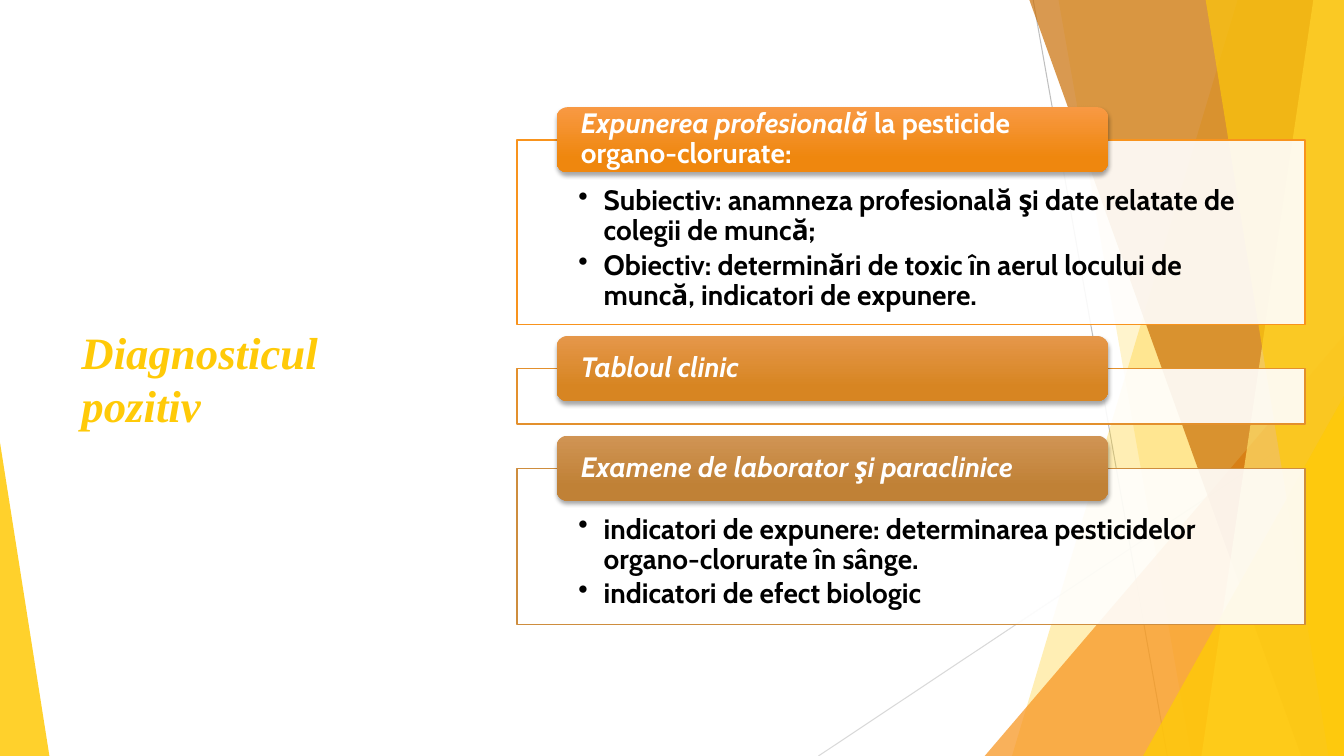
"""Build the slide on the positive diagnosis of organochlorine exposure."""
from lxml import etree
from pptx import Presentation
from pptx.dml.color import RGBColor
from pptx.enum import shapes, text
from pptx.oxml import ns
from pptx.util import Pt

COLORS = {
    "white": "FFFFFF", "black": "000000", "gold": "FFCA08", "pale": "FFDF6B",
    "orange": "F8931D", "brown": "CA6F06", "grey": "BFBFBF", "silver": "D9D9D9",
    "amber": "E3902D", "tan": "CE8D3E",
    "orange_light": "F89943", "orange_dark": "EF870E",
    "amber_light": "E5974A", "amber_dark": "D78522",
    "tan_light": "D09454", "tan_dark": "C08136",
}
WIDTH, HEIGHT = 960, 540
PANEL_LEFT, PANEL_WIDTH, PANEL_GAP = 369.3, 563, 31.6
HEADING_LEFT, HEADING_WIDTH, HEADING_HEIGHT, HEADING_RISE = 397.6, 394, 46.5, 23.4

RAYS = [("grey", 738, 0, 833.8, HEIGHT), ("silver", WIDTH, 290.2, 584.6, HEIGHT)]
BACK_FACETS = [(884.2, 722.9, "gold", 30), (756, 851, "gold", 20)]
FRONT_FACETS = [(735.1, 929.5, "brown", 70), (938.2, 858.2, "pale", 70),
                (861.1, 949, "gold", 65)]
SECTIONS = [
    ("orange", 131.8,
     [("Expunerea profesională", True), (" la pesticide organo-clorurate:", False)],
     ["Subiectiv: anamneza profesională şi date relatate de colegii de muncă;",
      "Obiectiv: determinări de toxic în aerul locului de muncă, indicatori de expunere."]),
    ("amber", 39.6, [("Tabloul clinic", True)], []),
    ("tan", 111.6, [("Examene de laborator şi paraclinice", True)],
     ["indicatori de expunere: determinarea pesticidelor organo-clorurate în sânge.",
      "indicatori de efect biologic"]),
]


def rgb(color):
    """Return the named colour."""
    return RGBColor.from_string(COLORS[color])


def add_element(parent, tag, **attributes):
    """Append a DrawingML element to its parent."""
    return etree.SubElement(parent, ns.qn(tag), attributes)


def fill_solid(shape, color, opacity):
    """Give a shape a translucent fill without outline or shadow."""
    shape.shadow.inherit = False
    shape.fill.solid()
    shape.fill.fore_color.rgb = rgb(color)
    shape.line.fill.background()
    tint = shape._element.spPr.find(".//" + ns.qn("a:srgbClr"))
    add_element(tint, "a:alpha", val=str(opacity * 1000))


def add_ray(slide, color, x1, y1, x2, y2):
    """Draw a thin background line."""
    ray = slide.shapes.add_connector(
        shapes.MSO_CONNECTOR.STRAIGHT, Pt(x1), Pt(y1), Pt(x2), Pt(y2))
    ray.line.color.rgb = rgb(color)
    ray.line.width = Pt(0.75)
    add_element(ray._element.spPr, "a:effectLst")


def add_facet(slide, top_x, bottom_x, color, opacity):
    """Draw a facet that reaches the right edge of the slide."""
    top = Pt(-0.6)
    outline = slide.shapes.build_freeform(Pt(top_x), top)
    outline.add_line_segments([(Pt(WIDTH), top), (Pt(WIDTH), Pt(HEIGHT)),
                               (Pt(bottom_x), Pt(HEIGHT))])
    fill_solid(outline.convert_to_shape(), color, opacity)


def add_corner(slide, left, top, width, apex, color, opacity):
    """Draw a triangle that stands on the bottom edge."""
    corner = slide.shapes.add_shape(
        shapes.MSO_SHAPE.ISOSCELES_TRIANGLE,
        Pt(left), Pt(top), Pt(width), Pt(HEIGHT - top))
    corner.adjustments[0] = apex
    fill_solid(corner, color, opacity)


def set_frame(shape, anchor, left, top, right, bottom):
    """Set wrapping, anchor and insets, and return the text frame."""
    frame = shape.text_frame
    frame.word_wrap = True
    frame.vertical_anchor = anchor
    frame.margin_left, frame.margin_top = Pt(left), Pt(top)
    frame.margin_right, frame.margin_bottom = Pt(right), Pt(bottom)
    return frame


def add_run(paragraph, wording, color, size=20, font="Cabin", italic=False):
    """Add one bold run to a paragraph."""
    run = paragraph.add_run()
    run.text = wording
    run.font.name, run.font.size = font, Pt(size)
    run.font.bold, run.font.italic = True, italic
    run.font.color.rgb = rgb(color)


def add_title(slide, wording):
    """Add the slide title on the left."""
    title = slide.shapes.add_textbox(Pt(51.1), Pt(108.7), Pt(206.6), Pt(322.6))
    frame = set_frame(title, text.MSO_ANCHOR.MIDDLE, 7.2, 3.6, 7.2, 3.6)
    add_run(frame.paragraphs[0], wording, "gold", 32, "Times New Roman", True)


def add_panel(slide, top, height, color, points):
    """Add a framed panel with its bullet points."""
    panel = slide.shapes.add_shape(
        shapes.MSO_SHAPE.RECTANGLE, Pt(PANEL_LEFT), Pt(top), Pt(PANEL_WIDTH), Pt(height))
    fill_solid(panel, "white", 90)
    panel.line.color.rgb = rgb(color)
    panel.line.width = Pt(1)
    frame = set_frame(panel, text.MSO_ANCHOR.TOP, 43.9, 33.1, 43.9, 11.5)
    for index, point in enumerate(points):
        paragraph = frame.add_paragraph() if index else frame.paragraphs[0]
        paragraph.level = 1
        paragraph.alignment = text.PP_ALIGN.LEFT
        paragraph.line_spacing = 0.9
        paragraph.space_after = Pt(3)
        properties = paragraph._p.get_or_add_pPr()
        properties.set("marL", str(Pt(18)))
        properties.set("indent", str(Pt(-18)))
        add_element(properties, "a:buChar", char="•")
        add_run(paragraph, point, "black")


def add_heading(slide, top, color, parts):
    """Add a shaded rounded heading with a soft shadow."""
    heading = slide.shapes.add_shape(
        shapes.MSO_SHAPE.ROUNDED_RECTANGLE,
        Pt(HEADING_LEFT), Pt(top), Pt(HEADING_WIDTH), Pt(HEADING_HEIGHT))
    heading.line.fill.background()
    heading.fill.gradient()
    heading.fill.gradient_angle = 270
    shades = [(0, "light"), (0.78, "dark")]
    for stop, (position, shade) in zip(heading.fill.gradient_stops, shades):
        stop.position = position
        stop.color.rgb = rgb(f"{color}_{shade}")
    heading.shadow.inherit = False
    effects = heading._element.spPr.find(ns.qn("a:effectLst"))
    shadow = add_element(effects, "a:outerShdw", blurRad=str(Pt(3)), dist=str(Pt(2)),
                         dir="5400000", rotWithShape="0")
    tint = add_element(shadow, "a:srgbClr", val=COLORS["black"])
    add_element(tint, "a:alpha", val="35000")
    frame = set_frame(heading, text.MSO_ANCHOR.MIDDLE, 15.1, 0, 15.1, 0)
    paragraph = frame.paragraphs[0]
    paragraph.alignment = text.PP_ALIGN.LEFT
    paragraph.line_spacing = 0.9
    for wording, italic in parts:
        add_run(paragraph, wording, "white", italic=italic)


def add_background(slide):
    """Draw the lines and translucent facets behind the content."""
    for ray in RAYS:
        add_ray(slide, *ray)
    for facet in BACK_FACETS:
        add_facet(slide, *facet)
    add_corner(slide, 703.4, 239.8, 256.6, 1, "orange", 72)
    for facet in FRONT_FACETS:
        add_facet(slide, *facet)
    add_corner(slide, 816.5, 283, 143.5, 1, "gold", 80)
    add_corner(slide, 0, 316.1, 35.3, 0, "gold", 85)


def main():
    """Build and save the slide."""
    deck = Presentation()
    deck.slide_width, deck.slide_height = Pt(WIDTH), Pt(HEIGHT)
    slide = deck.slides.add_slide(deck.slide_layouts[6])
    add_background(slide)
    add_title(slide, "Diagnosticul pozitiv")
    top = 100
    for color, height, heading_parts, points in SECTIONS:
        add_panel(slide, top, height, color, points)
        add_heading(slide, top - HEADING_RISE, color, heading_parts)
        top += height + PANEL_GAP
    deck.save("out.pptx")


if __name__ == "__main__":
    main()
